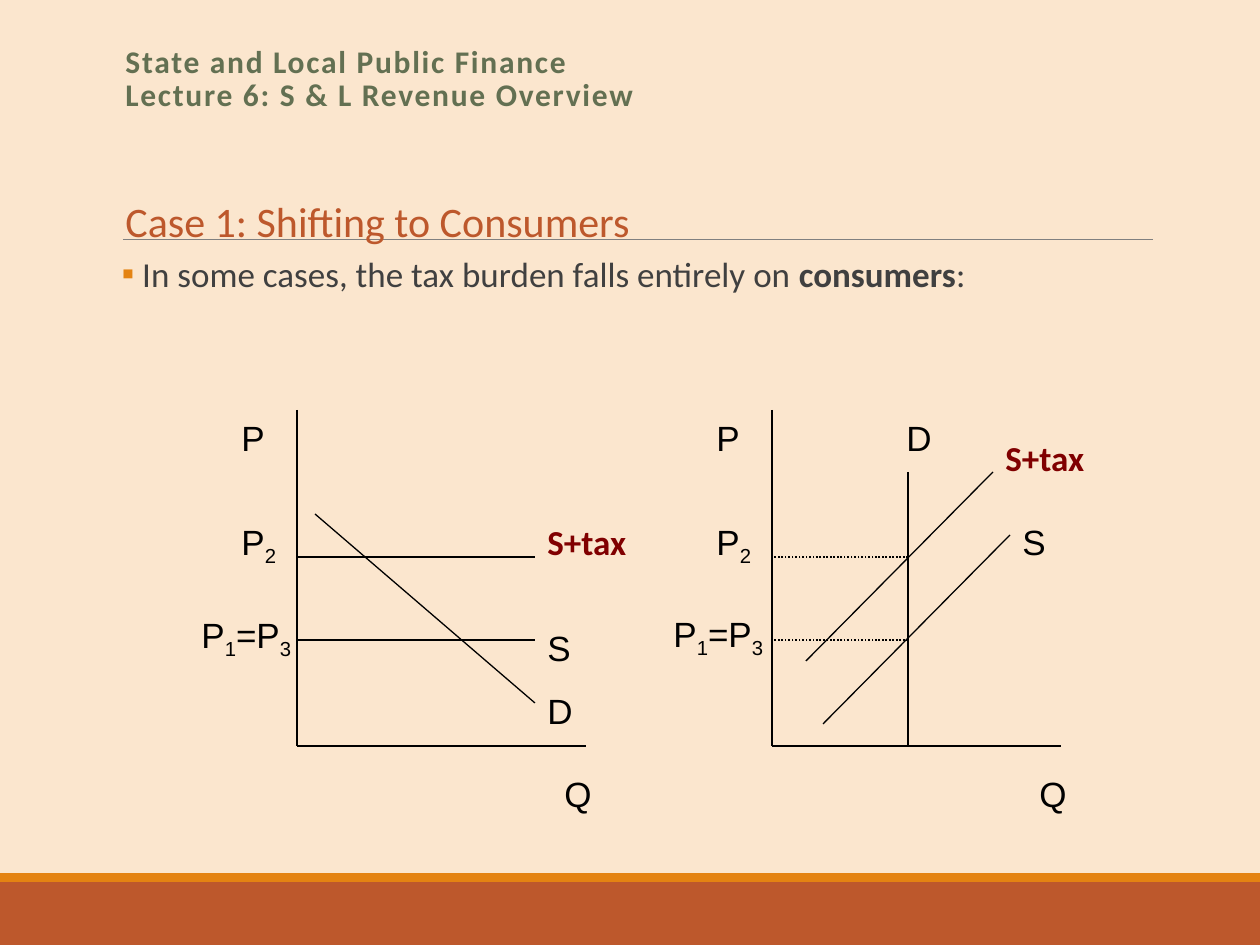
import pptx
import pptx.util
import pptx.dml.color
import pptx.enum.dml
import pptx.enum.shapes
import pptx.oxml.ns
import lxml.etree
from dataclasses import dataclass


@dataclass(frozen=True)
class Theme:
    background: str = "FBE6CE"
    rust: str = "BD582C"
    orange: str = "E48312"
    rule: str = "808080"
    body: str = "404040"
    course: str = "637052"
    ink: str = "000000"
    taxed: str = "800000"
    sans: str = "Calibri"
    plain: str = "Arial"
    course_size: int = 18
    heading_size: int = 24
    text_size: int = 20


def px(length):
    return round(length * 914400 / 126)


def rgb(value):
    return pptx.dml.color.RGBColor.from_string(value)


def child(parent, tag, **attributes):
    return lxml.etree.SubElement(parent, pptx.oxml.ns.qn(tag), **attributes)


class SlideWriter:
    def __init__(self, slide, theme):
        self.slide = slide
        self.theme = theme
        slide.background.fill.solid()
        slide.background.fill.fore_color.rgb = rgb(theme.background)

    def band(self, x, y, width, height, color):
        band = self.slide.shapes.add_shape(
            pptx.enum.shapes.MSO_SHAPE.RECTANGLE, px(x), px(y), px(width), px(height))
        band.shadow.inherit = False
        band.fill.solid()
        band.fill.fore_color.rgb = rgb(color)
        band.line.fill.background()

    def line(self, start, end, color=None, width=0.75, dash=None):
        line = self.slide.shapes.add_connector(
            pptx.enum.shapes.MSO_CONNECTOR.STRAIGHT, *map(px, start + end))
        line.line.color.rgb = rgb(color or self.theme.ink)
        line.line.width = pptx.util.Pt(width)
        if dash:
            line.line.dash_style = dash
        child(line._element.spPr, "a:effectLst")

    def text(self, x, y, width, height, pieces, font, color, size, wrap=True,
             paragraph_format=None, frame_format=None, tracking=None):
        frame = self.slide.shapes.add_textbox(px(x), px(y), px(width), px(height)).text_frame
        frame.word_wrap = wrap
        for name, value in (frame_format or {}).items():
            setattr(frame, name, value)
        paragraph = frame.paragraphs[0]
        for name, value in (paragraph_format or {}).items():
            setattr(paragraph, name, value)
        for words, style in pieces:
            if words == "\n":
                paragraph.add_line_break()
                continue
            run = paragraph.add_run()
            run.text = words
            run.font.color.rgb = rgb(color)
            font_format = {"name": font, "size": pptx.util.Pt(size), "bold": style == "bold"}
            for name, value in font_format.items():
                setattr(run.font, name, value)
            if style == "subscript":
                run.font._element.set("baseline", "-25000")
            if tracking:
                run.font._element.set("spc", str(tracking))
        return paragraph

    def bullet(self, x, y, width, height, pieces):
        theme = self.theme
        paragraph = self.text(
            x, y, width, height, pieces, theme.sans, theme.body, theme.text_size,
            paragraph_format={"line_spacing": 0.9, "space_before": pptx.util.Pt(6.8),
                              "space_after": pptx.util.Pt(1.1)},
            frame_format={"margin_left": 0, "margin_right": 0})
        properties = paragraph._p.get_or_add_pPr()
        properties.set("marL", str(px(8)))
        properties.set("indent", str(px(-8)))
        child(child(properties, "a:buClr"), "a:srgbClr", val=theme.orange)
        child(properties, "a:buFont", typeface=theme.sans)
        child(properties, "a:buChar", char="▪")

    def label(self, x, y, width, words):
        pieces = [(part, "subscript" if part.isdigit() else None) for part in words]
        self.text(x, y, width, 63, pieces, self.theme.plain, self.theme.ink,
                  self.theme.text_size)

    def tax_label(self, x, y):
        self.text(x, y, 136, 63, [("S+tax", "bold")], self.theme.sans,
                  self.theme.taxed, self.theme.text_size)

    def axes(self, origin_x, equal_price_x, equal_price_y):
        self.line((origin_x, 410), (origin_x, 746))
        self.line((origin_x, 746), (origin_x + 289, 746))
        self.label(origin_x - 68, 410, 50, ["P"])
        self.label(origin_x + 255, 766, 50, ["Q"])
        self.label(origin_x - 68, 514, 68, ["P", "2"])
        self.label(equal_price_x, equal_price_y, 136, ["P", "1", "=P", "3"])


def main():
    deck = pptx.Presentation()
    deck.slide_width, deck.slide_height = px(1260), px(945)
    theme = Theme()
    writer = SlideWriter(deck.slides.add_slide(deck.slide_layouts[6]), theme)

    writer.band(0, 882, 1260, 63, theme.rust)
    writer.band(0, 873, 1260, 9, theme.orange)
    writer.line((123, 239), (1153, 239), theme.rule, 0.5)
    writer.text(113, 42, 1040, 82,
                [("State and Local Public Finance", "bold"), ("\n", None),
                 ("Lecture 6: S & L Revenue Overview", "bold")],
                theme.sans, theme.course, theme.course_size,
                paragraph_format={"line_spacing": 0.85}, tracking=100)
    writer.text(113, 189, 546, 63, [("Case 1: Shifting to Consumers", None)],
                theme.sans, theme.rust, theme.heading_size, wrap=False)
    writer.bullet(122, 251, 886, 52,
                  [(" In some cases, the tax burden falls entirely on ", None),
                   ("consumers", "bold"), (":", None)])

    taxed_price, base_price = 557, 640
    elastic_x, inelastic_x, demand_x = 297, 772, 908

    writer.axes(elastic_x, 189, 607)
    for price in (taxed_price, base_price):
        writer.line((elastic_x, price), (535, price))
        writer.line((demand_x, price), (inelastic_x, price), width=1,
                    dash=pptx.enum.dml.MSO_LINE.ROUND_DOT)
    writer.line((315, 514), (535, 703))
    writer.tax_label(535, 514)
    writer.label(535, 620, 84, ["S"])
    writer.label(535, 683, 84, ["D"])

    writer.axes(inelastic_x, 661, 606)
    writer.line((demand_x, 472), (demand_x, 746))
    writer.line((806, 661), (993, 472))
    writer.line((823, 724), (1010, 535))
    writer.label(894, 410, 65, ["D"])
    writer.tax_label(993, 430)
    writer.label(1010, 514, 84, ["S"])

    deck.save("out.pptx")


if __name__ == "__main__":
    main()
